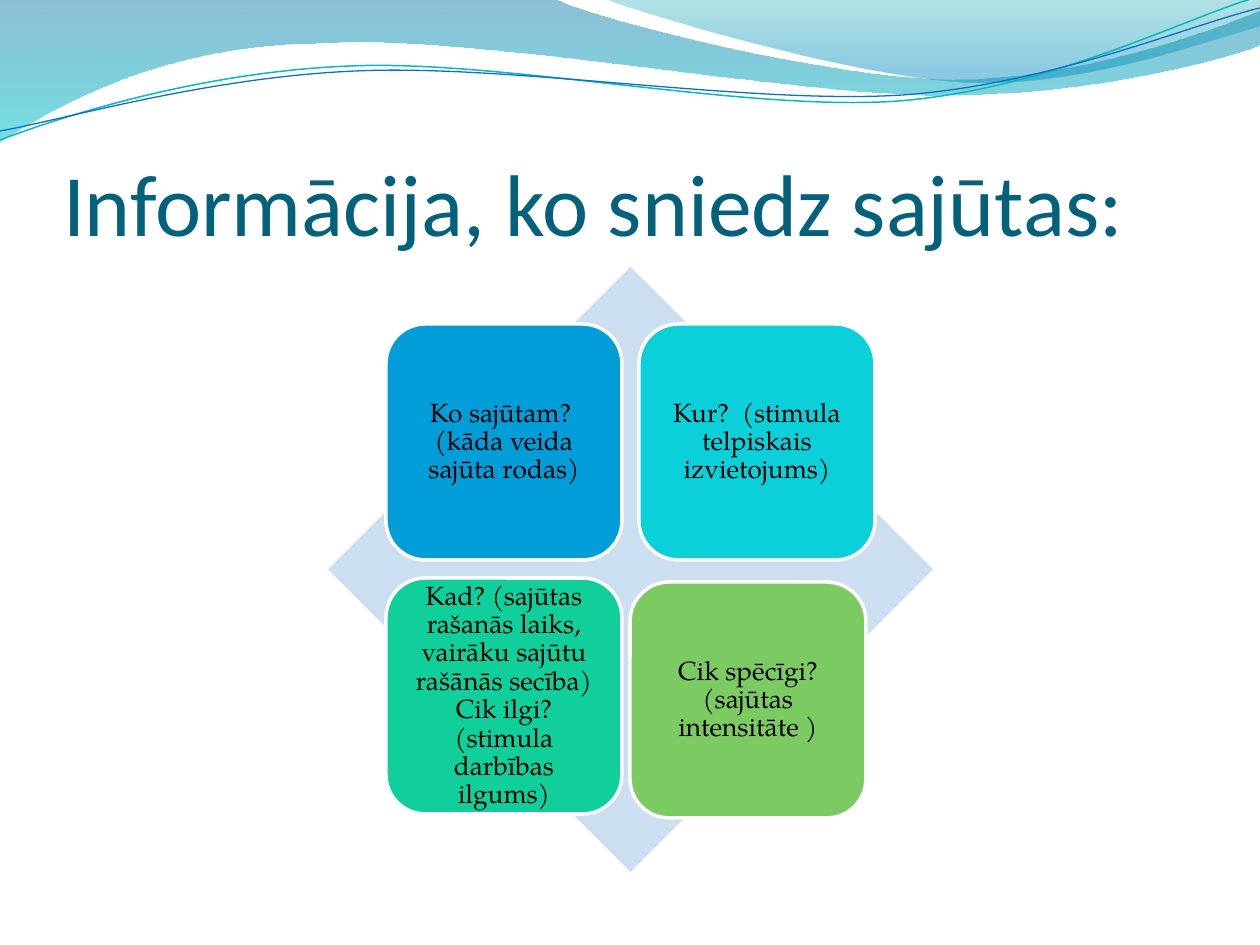
from lxml.etree import SubElement
from pptx import Presentation
from pptx.dml.color import RGBColor
from pptx.enum.shapes import MSO_SHAPE
from pptx.enum.text import MSO_ANCHOR, MSO_AUTO_SIZE, PP_ALIGN
from pptx.oxml.ns import qn
from pptx.util import Inches, Pt

PX = Inches(1) / 126

# A step of one point is a straight line, a step of three is a Bézier curve.
BANDS = [
    ((0, -1), [
        [(554, -1)],
        [(600, 21), (837, 79), (955, 79)],
        [(1075, 79), (1207, 33), (1260, 11)],
        [(1261, 45)],
        [(1239, 55), (1096, 96), (940, 95)],
        [(784, 95), (481, 35), (324, 43)],
        [(163, 44), (58, 105), (-1, 142)],
        [(0, -1)],
    ], [(0, "0074A1", 45), (1, "00C6CF", 55)]),
    ((604, -1), [
        [(641, 14), (859, 78), (969, 82)],
        [(1079, 87), (1211, 40), (1260, 26)],
        [(1260, 0)],
        [(604, -1)],
    ], [(0, "00A1A9", 30), (0.8, "008BBF", 45)]),
]
STRANDS = [
    ((0, 140), [
        [(60, 117), (199, 72), (349, 66)],
        [(498, 59), (747, 112), (898, 101)],
        [(1050, 89), (1182, 19), (1257, -3)],
    ], "0AB8BF", 0.85),
    ((0, 131), [
        [(59, 121), (207, 77), (357, 71)],
        [(508, 64), (752, 105), (903, 95)],
        [(1053, 84), (1186, 26), (1260, 8)],
    ], "0F6FC6", 0.75),
]
# Left and top relative to the diamond, fill, text
TILES = [
    (58, 57, "009DD9", "Ko sajūtam?  (kāda veida sajūta rodas)"),
    (311, 57, "0BD0D9", "Kur?  (stimula telpiskais izvietojums)"),
    (58, 311, "10CF9B", "Kad? (sajūtas rašanās laiks, vairāku sajūtu rašānās secība) "
                        "Cik ilgi? (stimula darbības ilgums)"),
    (302, 315, "7CCA62", "Cik spēcīgi? (sajūtas intensitāte )"),
]


def px(length):
    return round(length * PX)


def color(value):
    return RGBColor.from_string(value)


def set_font(paragraph, name, size, value):
    for run in paragraph.runs:
        run.font.name = name
        run.font.size = Pt(size)
        run.font.color.rgb = color(value)


def set_margins(text_frame, left, top, right, bottom):
    text_frame.margin_left, text_frame.margin_top = px(left), px(top)
    text_frame.margin_right, text_frame.margin_bottom = px(right), px(bottom)


def add_curve(slide, left, top, start, steps):
    builder = slide.shapes.build_freeform(left + start[0], top + start[1], scale=PX)
    points = [(left + x, top + y) for step in steps for x, y in step]
    builder.add_line_segments(points, close=False)
    shape = builder.convert_to_shape()
    shape.shadow.inherit = False
    lines = iter(list(shape._element.iter(qn("a:lnTo"))))
    for step in steps:
        first, *others = [next(lines) for _ in step]
        if others:
            first.tag = qn("a:cubicBezTo")
            for line in others:
                first.append(line[0])
                line.getparent().remove(line)
    return shape


def add_waves(slide, left, top):
    for start, steps, stops in BANDS:
        band = add_curve(slide, left, top, start, steps)
        band.line.fill.background()
        band.fill.gradient()
        band.fill.gradient_angle = 270
        for stop, (position, value, opacity) in zip(band.fill.gradient_stops, stops):
            stop.position = position
            stop.color.rgb = color(value)
            rgb = stop._gs.find(qn("a:srgbClr"))
            SubElement(rgb, qn("a:alpha")).set("val", str(opacity * 1000))
    for start, steps, value, width in STRANDS:
        strand = add_curve(slide, left, top, start, steps)
        strand.fill.background()
        strand.line.color.rgb = color(value)
        strand.line.width = Pt(width)


def place_title(slide, left, top, width, height):
    title = slide.shapes.title
    title.left, title.top = px(left), px(top)
    title.width, title.height = px(width), px(height)
    text_frame = title.text_frame
    text_frame.text = "Informācija, ko sniedz sajūtas:"
    text_frame.word_wrap = True
    text_frame.auto_size = MSO_AUTO_SIZE.NONE
    text_frame.vertical_anchor = MSO_ANCHOR.BOTTOM
    set_margins(text_frame, 0, 6, 0, 0)
    paragraph = text_frame.paragraphs[0]
    paragraph.alignment = PP_ALIGN.LEFT
    set_font(paragraph, "Calibri", 50, "04617B")


def add_block(slide, kind, left, top, size, fill):
    shape = slide.shapes.add_shape(kind, px(left), px(top), px(size), px(size))
    shape.shadow.inherit = False
    shape.fill.solid()
    shape.fill.fore_color.rgb = color(fill)
    return shape


def add_matrix(slide, left, top, size):
    diamond = add_block(slide, MSO_SHAPE.DIAMOND, left, top, size, "CCDFF1")
    diamond.line.fill.background()
    for x, y, fill, text in TILES:
        tile = add_block(slide, MSO_SHAPE.ROUNDED_RECTANGLE, left + x, top + y, 236, fill)
        tile.line.color.rgb = color("FFFFFF")
        tile.line.width = Pt(2)
        text_frame = tile.text_frame
        text_frame.text = text
        text_frame.word_wrap = True
        text_frame.vertical_anchor = MSO_ANCHOR.MIDDLE
        set_margins(text_frame, 8, 8, 8, 8)
        paragraph = text_frame.paragraphs[0]
        paragraph.alignment = PP_ALIGN.CENTER
        paragraph.line_spacing = 0.9
        set_font(paragraph, "TeX Gyre Pagella", 15, "000000")


def main():
    presentation = Presentation()
    presentation.slide_width, presentation.slide_height = px(1260), px(945)
    slide = presentation.slides.add_slide(presentation.slide_layouts[5])
    add_waves(slide, 0, 0)
    place_title(slide, 63, 97, 1134, 157)
    add_matrix(slide, 328, 267, 605)
    presentation.save("out.pptx")


if __name__ == "__main__":
    main()
